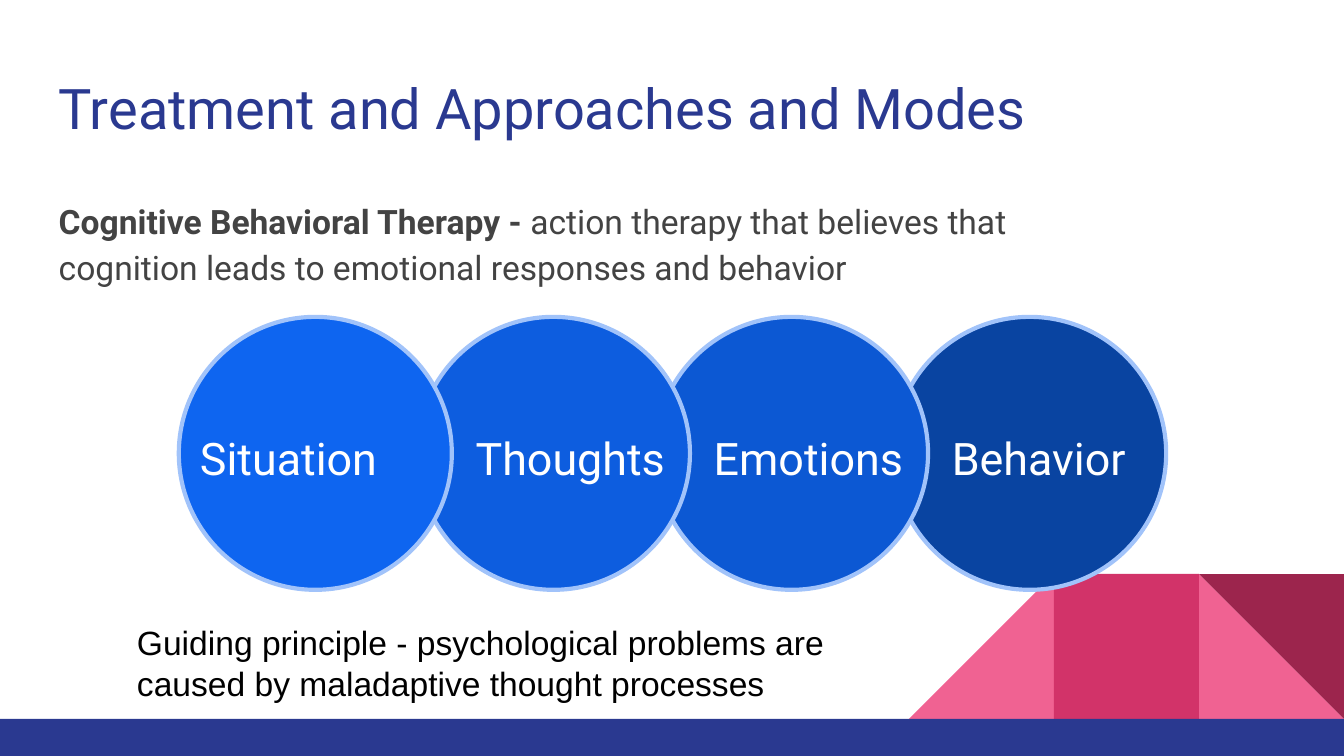
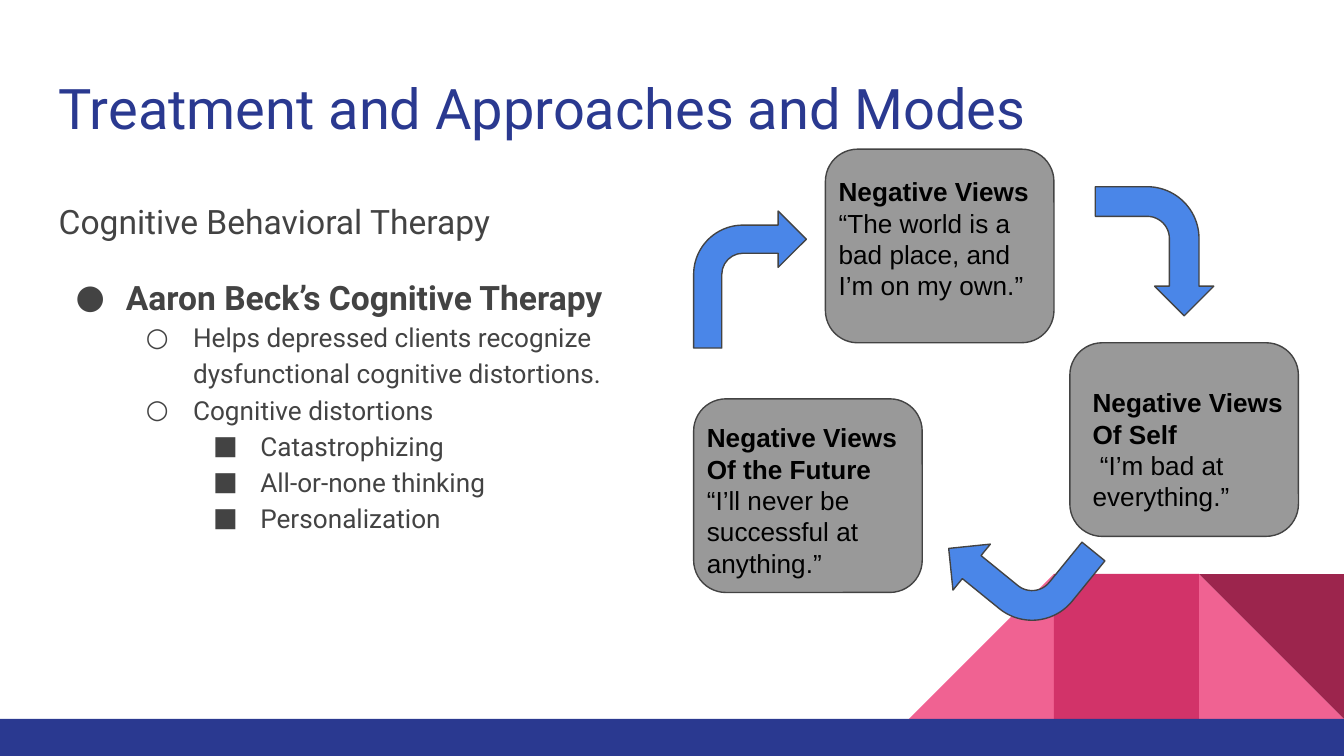
from dataclasses import dataclass
from lxml.etree import SubElement
from pptx import Presentation
from pptx.dml.color import RGBColor
from pptx.enum.shapes import MSO_SHAPE
from pptx.enum.text import MSO_ANCHOR
from pptx.oxml.ns import qn
from pptx.util import Cm, Pt


@dataclass(frozen=True)
class Theme:
    navy: str = "2A3990"
    pink: str = "F06292"
    rose: str = "D23369"
    wine: str = "9C254D"
    gray: str = "434343"
    card: str = "999999"
    arrow: str = "4A86E8"
    ring: str = "A1C3FA"
    white: str = "FFFFFF"
    black: str = "000000"
    blues: tuple = ("0E65F0", "0D5DDF", "0C58D3", "0944A1")
    heading_font: str = "Roboto"
    note_font: str = "Arial"
    title_size: int = 30
    label_size: int = 24
    body_size: int = 18
    detail_size: int = 14


theme = Theme()


def draw_shape(slide, kind, left, top, width, height, fill, line=None, weight=0.75, rotation=0):
    shape = slide.shapes.add_shape(kind, Cm(left), Cm(top), Cm(width), Cm(height))
    shape.shadow.inherit = False
    shape.rotation = rotation
    shape.fill.solid()
    shape.fill.fore_color.rgb = RGBColor.from_string(fill)
    if line:
        shape.line.color.rgb = RGBColor.from_string(line)
        shape.line.width = Pt(weight)
    else:
        shape.line.fill.background()


def write_text(slide, left, top, width, height, paragraphs, font, color,
               spacing=1.0, anchor=MSO_ANCHOR.TOP):
    box = slide.shapes.add_textbox(Cm(left), Cm(top), Cm(width), Cm(height))
    frame = box.text_frame
    frame.word_wrap = True
    frame.vertical_anchor = anchor
    frame.margin_left = frame.margin_right = Cm(0.25)
    frame.margin_top = frame.margin_bottom = Cm(0.25)
    for index, spans in enumerate(paragraphs):
        para = frame.add_paragraph() if index else frame.paragraphs[0]
        para.line_spacing = spacing
        for text, size, bold in spans:
            span = para.add_run()
            span.text = text
            span.font.name = font
            span.font.size = Pt(size)
            span.font.bold = bold
            span.font.color.rgb = RGBColor.from_string(color)
    return frame.paragraphs


deck = Presentation()
deck.slide_width = Cm(25.4)
deck.slide_height = Cm(14.29)
blank = deck.slide_layouts[6]

tile = 2.74
tile_top = 10.85
band_top = tile_top + tile
tiles = [
    (MSO_SHAPE.RIGHT_TRIANGLE, 1, theme.pink, 0),
    (MSO_SHAPE.RIGHT_TRIANGLE, 3, theme.pink, 270),
    (MSO_SHAPE.RECTANGLE, 2, theme.rose, 0),
    (MSO_SHAPE.RIGHT_TRIANGLE, 1, theme.wine, 180),
]

pages = [deck.slides.add_slide(blank) for _ in range(2)]
for page in pages:
    for kind, steps, fill, rotation in tiles:
        draw_shape(page, kind, 25.4 - steps * tile, tile_top, tile, tile, fill, rotation=rotation)
    draw_shape(page, MSO_SHAPE.RECTANGLE, 0, band_top, 25.4, 0.7, theme.navy)
    write_text(page, 0.86, 1.14, 23.67, 1.68,
               [[("Treatment and Approaches and Modes", theme.title_size, False)]],
               theme.heading_font, theme.navy)

chain_page, cycle_page = pages

definition = [[
    ("Cognitive Behavioral Therapy - ", theme.body_size, True),
    ("action therapy that believes that cognition leads to emotional responses and behavior",
     theme.body_size, False),
]]
write_text(chain_page, 0.86, 3.43, 19.94, 2.59, definition,
           theme.heading_font, theme.gray, spacing=1.15)

stages = [("Situation", 0.15), ("Thoughts", 0.86), ("Emotions", 0.86), ("Behavior", 0.86)]
for index, (stage, inset) in reversed(list(enumerate(stages))):
    left = 3.38 + index * 4.5
    draw_shape(chain_page, MSO_SHAPE.OVAL, left, 5.99, 5.16, 5.16,
               theme.blues[index], theme.ring, 2.25)
    write_text(chain_page, left + inset, 7.85, 4.47, 1.45,
               [[(stage, theme.label_size, False)]],
               theme.heading_font, theme.white, 1.15, MSO_ANCHOR.MIDDLE)

principle = "Guiding principle - psychological problems are caused by maladaptive thought processes"
write_text(chain_page, 2.34, 11.51, 14.71, 2.11,
           [[(principle, theme.body_size, False)]], theme.note_font, theme.black)

outline = [
    (0, "Cognitive Behavioral Therapy", theme.body_size, False),
    (1, "Aaron Beck’s Cognitive Therapy", theme.body_size, True),
    (2, "Helps depressed clients recognize dysfunctional cognitive distortions.",
     theme.detail_size, False),
    (2, "Cognitive distortions", theme.detail_size, False),
    (3, "Catastrophizing", theme.detail_size, False),
    (3, "All-or-none thinking", theme.detail_size, False),
    (3, "Personalization", theme.detail_size, False),
]
bullets = {1: ("●", 0.95), 2: ("○", 0.89), 3: ("■", 0.89)}
outline_paras = write_text(cycle_page, 0.86, 3.43, 11.53, 9.27,
                           [[tuple(spans)] for _, *spans in outline],
                           theme.heading_font, theme.gray, spacing=1.15)
outline_paras[1].space_before = Pt(16)
for para, (depth, *_) in zip(outline_paras, outline):
    if depth:
        symbol, hang = bullets[depth]
        para.level = depth - 1
        properties = para._p.get_or_add_pPr()
        properties.set("marL", str(Cm(1.27 * depth)))
        properties.set("indent", str(-Cm(hang)))
        bullet_color = SubElement(properties, qn("a:buClr"))
        SubElement(bullet_color, qn("a:srgbClr")).set("val", theme.gray)
        SubElement(properties, qn("a:buFont")).set("typeface", theme.heading_font)
        SubElement(properties, qn("a:buChar")).set("char", symbol)

cards = [
    (15.6, 2.82, 0, 0.25, "Negative Views", "“The world is a bad place, and I’m on my own.”"),
    (20.22, 6.48, 0.18, 0.58, "Negative Views Of Self", " “I’m bad at everything.”"),
    (13.11, 7.54, 0, 0.18, "Negative Views Of the Future",
     "“I’ll never be successful at anything.”"),
]
for left, top, shift, drop, heading, quote in cards:
    draw_shape(cycle_page, MSO_SHAPE.ROUNDED_RECTANGLE, left, top, 4.32, 3.66,
               theme.card, theme.gray)
    write_text(cycle_page, left + shift, top + drop, 4.32, 3.07,
               [[(heading, theme.detail_size, True)], [(quote, theme.detail_size, False)]],
               theme.note_font, theme.black)

arrows = [
    (13.11, 3.99, 2.13, 2.59, 0),
    (20.6, 3.63, 2.44, 2.24, 90),
    (18.01, 9.58, 2.44, 2.24, 219.1),
]
for left, top, width, height, rotation in arrows:
    draw_shape(cycle_page, MSO_SHAPE.BENT_ARROW, left, top, width, height,
               theme.arrow, theme.gray, rotation=rotation)

deck.save("out.pptx")
